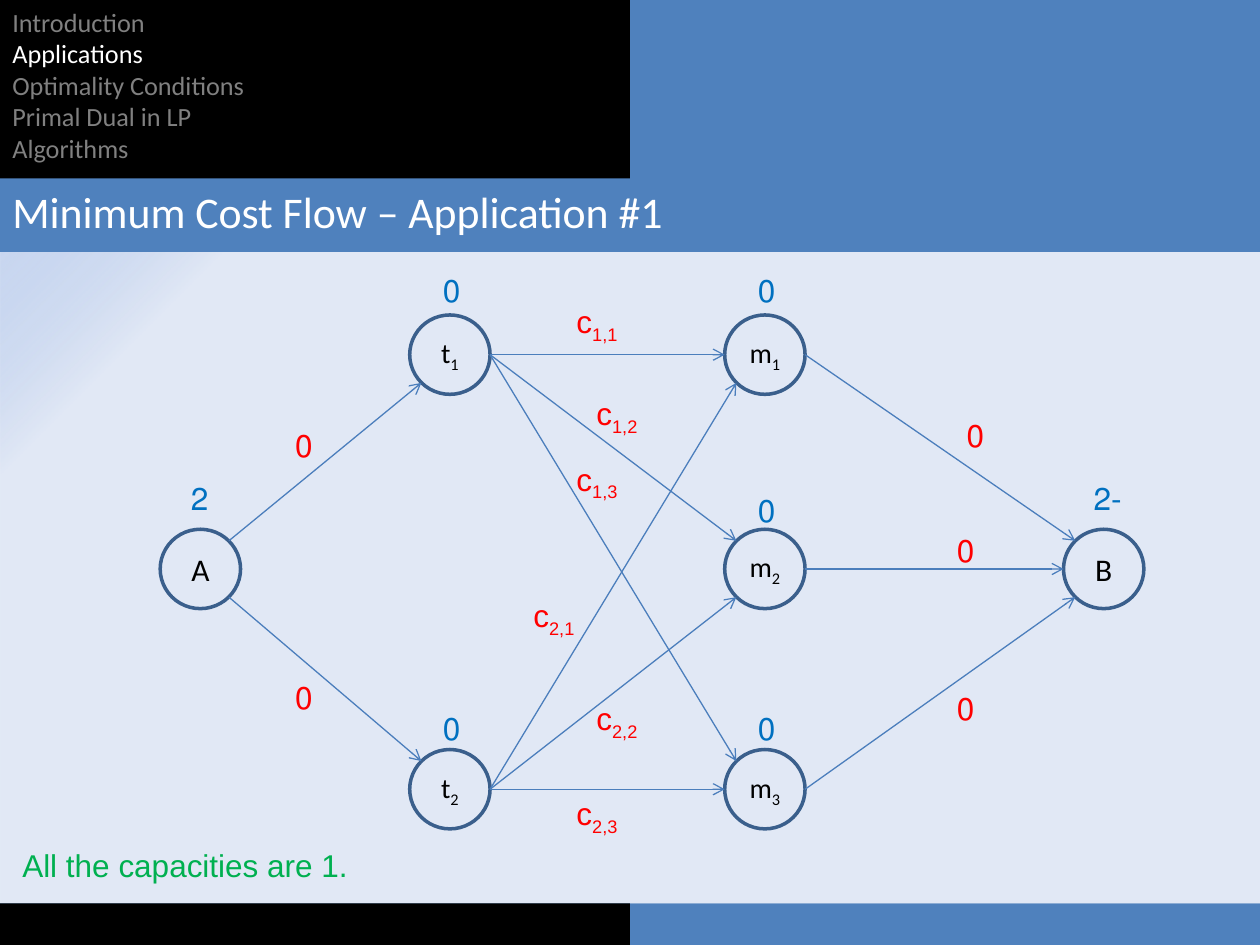
from lxml.etree import SubElement
from pptx import Presentation
from pptx.dml.color import RGBColor
from pptx.enum.shapes import MSO_CONNECTOR, MSO_SHAPE
from pptx.enum.text import MSO_ANCHOR, PP_ALIGN
from pptx.oxml.ns import qn
from pptx.util import Cm, Pt

COLORS = {
    "band": "4F81BD", "black": "000000", "white": "FFFFFF", "muted": "808080",
    "corner": "9AB5E4", "canvas": "E1E8F5", "node": "3A5F8C", "edge": "4B7EBC",
    "supply": "0070C0", "cost": "FF0000", "note": "00B050",
}
SLIDE_W, SLIDE_H = 25.4, 19.05
NODE_W, NODE_H = 1.62, 1.6
LABEL_H = 1.02

# Node: left, top, supply, supply label offset
NODES = {
    "A": (3.23, 5.59, "2", (0, -1.14)),
    "t_1": (8.26, 1.27, "0", (0.05, -1.02)),
    "t_2": (8.26, 10.03, "0", (0.05, -0.94)),
    "m_1": (14.61, 1.27, "0", (0.05, -1.02)),
    "m_2": (14.61, 5.59, "0", (0.05, -0.89)),
    "m_3": (14.61, 10.03, "0", (0.05, -0.94)),
    "B": (21.44, 5.59, "-2", (0.2, -1.14)),
}

# Points on a node's rim, in half widths and half heights from its centre
RIM = {
    "left": (-1, 0), "right": (1, 0),
    "top left": (-0.71, -0.71), "top right": (0.71, -0.71),
    "bottom left": (-0.71, 0.71), "bottom right": (0.71, 0.71),
}

# Edge: start node and rim point, end node and rim point, cost, cost position
EDGES = [
    ("A", "top right", "t_1", "bottom left", "0", (5.08, 3.38)),
    ("A", "bottom right", "t_2", "top left", "0", (5.08, 8.46)),
    ("t_1", "right", "m_1", "left", "c_1,1", (11.23, 0.89)),
    ("t_1", "right", "m_2", "top left", "c_1,2", (11.63, 2.74)),
    ("t_1", "right", "m_3", "top left", "c_1,3", (11.23, 4.06)),
    ("t_2", "right", "m_1", "bottom left", "c_2,1", (10.36, 6.81)),
    ("t_2", "right", "m_2", "bottom left", "c_2,2", (11.63, 8.89)),
    ("t_2", "right", "m_3", "left", "c_2,3", (11.23, 10.8)),
    ("m_1", "right", "B", "top left", "0", (18.62, 3.18)),
    ("m_2", "right", "B", "left", "0", (18.42, 5.51)),
    ("m_3", "right", "B", "bottom left", "0", (18.42, 8.69)),
]


def rgb(name):
    return RGBColor.from_string(COLORS[name])


def add_run(p, text, size, font, color):
    r = p.add_run()
    r.text = text
    r.font.size, r.font.name = Pt(size), font
    r.font.color.rgb = rgb(color)
    return r


def add_symbol(p, symbol, size, font, color):
    """Write a symbol right to left; what follows "_" is a subscript."""
    p._p.get_or_add_pPr().set("rtl", "1")
    base, _, index = symbol.partition("_")
    add_run(p, base, size, font, color)
    if index:
        r = add_run(p, index, size, font, color)
        r.font._element.set("baseline", "-25000")


def add_box(s, shape, x, y, w, h):
    sp = s.shapes.add_shape(shape, Cm(x), Cm(y), Cm(w), Cm(h))
    sp.shadow.inherit = False
    return sp


def add_bar(s, x, y, w, h, color):
    sp = add_box(s, MSO_SHAPE.RECTANGLE, x, y, w, h)
    sp.fill.solid()
    sp.fill.fore_color.rgb = rgb(color)
    sp.line.fill.background()


def add_text(s, x, y, w, h):
    tf = s.shapes.add_textbox(Cm(x), Cm(y), Cm(w), Cm(h)).text_frame
    tf.word_wrap = True
    return tf


def add_label(s, x, y, w, symbol, color):
    p = add_text(s, x, y, w, LABEL_H).paragraphs[0]
    p.alignment = PP_ALIGN.RIGHT
    add_symbol(p, symbol, 18, "Arial", color)


def add_canvas(s, x, y, w, h):
    sp = add_box(s, MSO_SHAPE.RECTANGLE, x, y, w, h)
    sp.line.fill.background()
    sp.fill.gradient()
    sp.fill.gradient_angle = 315
    for stop, position, color in zip(sp.fill.gradient_stops, (0.02, 0.15), ("corner", "canvas")):
        stop.position = position
        stop.color.rgb = rgb(color)
    corner = sp._element.xpath(".//a:gs/a:srgbClr")[0]
    SubElement(corner, qn("a:alpha")).set("val", "52000")


def add_split_band(s, x, y, w, h, dark_h):
    add_bar(s, x, y, w, h, "band")
    add_bar(s, x, y, w / 2, dark_h, "black")


def add_header(s, x, y, w, h, sections, current, title):
    nav_h = 3.6
    add_split_band(s, x, y, w, h, nav_h)
    p = add_text(s, x, y + nav_h, w - 0.64, 2.39).paragraphs[0]
    add_run(p, title, 25, "Calibri", "white")
    tf = add_text(s, x, y, w / 2, 4.11)
    for i, section in enumerate(sections):
        p = tf.add_paragraph() if i else tf.paragraphs[0]
        add_run(p, section, 15, "Calibri", "white" if section == current else "muted")


def add_node(s, x, y, name):
    sp = add_box(s, MSO_SHAPE.OVAL, x, y, NODE_W, NODE_H)
    sp.fill.background()
    sp.line.color.rgb = rgb("node")
    sp.line.width = Pt(2)
    tf = sp.text_frame
    tf.margin_left = tf.margin_right = 0
    tf.vertical_anchor = MSO_ANCHOR.MIDDLE
    p = tf.paragraphs[0]
    p.alignment = PP_ALIGN.CENTER
    add_symbol(p, name, 16 if "_" in name else 18, "Calibri", "black")


def add_arrow(s, start, end):
    c = s.shapes.add_connector(MSO_CONNECTOR.STRAIGHT, *map(Cm, start + end))
    c.line.color.rgb = rgb("edge")
    c.line.width = Pt(0.75)
    SubElement(c.line._get_or_add_ln(), qn("a:tailEnd")).set("type", "arrow")
    SubElement(c._element.spPr, qn("a:effectLst"))


def add_network(s, x, y):
    def rim_point(name, place):
        left, top = NODES[name][:2]
        dx, dy = RIM[place]
        return x + left + NODE_W / 2 * (1 + dx), y + top + NODE_H / 2 * (1 + dy)

    # Nodes with their supplies
    for name, (left, top, supply, (dx, dy)) in NODES.items():
        add_node(s, x + left, y + top, name)
        add_label(s, x + left + dx, y + top + dy, 1.22, supply, "supply")
    # Edges with their costs
    for start, start_rim, end, end_rim, cost, (left, top) in EDGES:
        add_arrow(s, rim_point(start, start_rim), rim_point(end, end_rim))
        add_label(s, x + left, y + top, 1.47, cost, "cost")
    # Capacity note
    p = add_text(s, x + 0.2, y + 11.86, 7.62, LABEL_H).paragraphs[0]
    add_run(p, "All the capacities are 1.", 18, "Arial", "note")


def main():
    prs = Presentation()
    prs.slide_width, prs.slide_height = Cm(SLIDE_W), Cm(SLIDE_H)
    s = prs.slides.add_slide(prs.slide_layouts[6])
    header_h, footer_h = 5.08, 0.84
    sections = ["Introduction", "Applications", "Optimality Conditions",
                "Primal Dual in LP", "Algorithms"]
    add_canvas(s, 0, 3.58, SLIDE_W, 14.61)
    add_header(s, 0, 0, SLIDE_W, header_h, sections, "Applications",
               "Minimum Cost Flow – Application #1")
    add_split_band(s, 0, SLIDE_H - footer_h, SLIDE_W, footer_h, footer_h)
    add_network(s, 0, header_h)
    prs.save("out.pptx")


if __name__ == "__main__":
    main()
